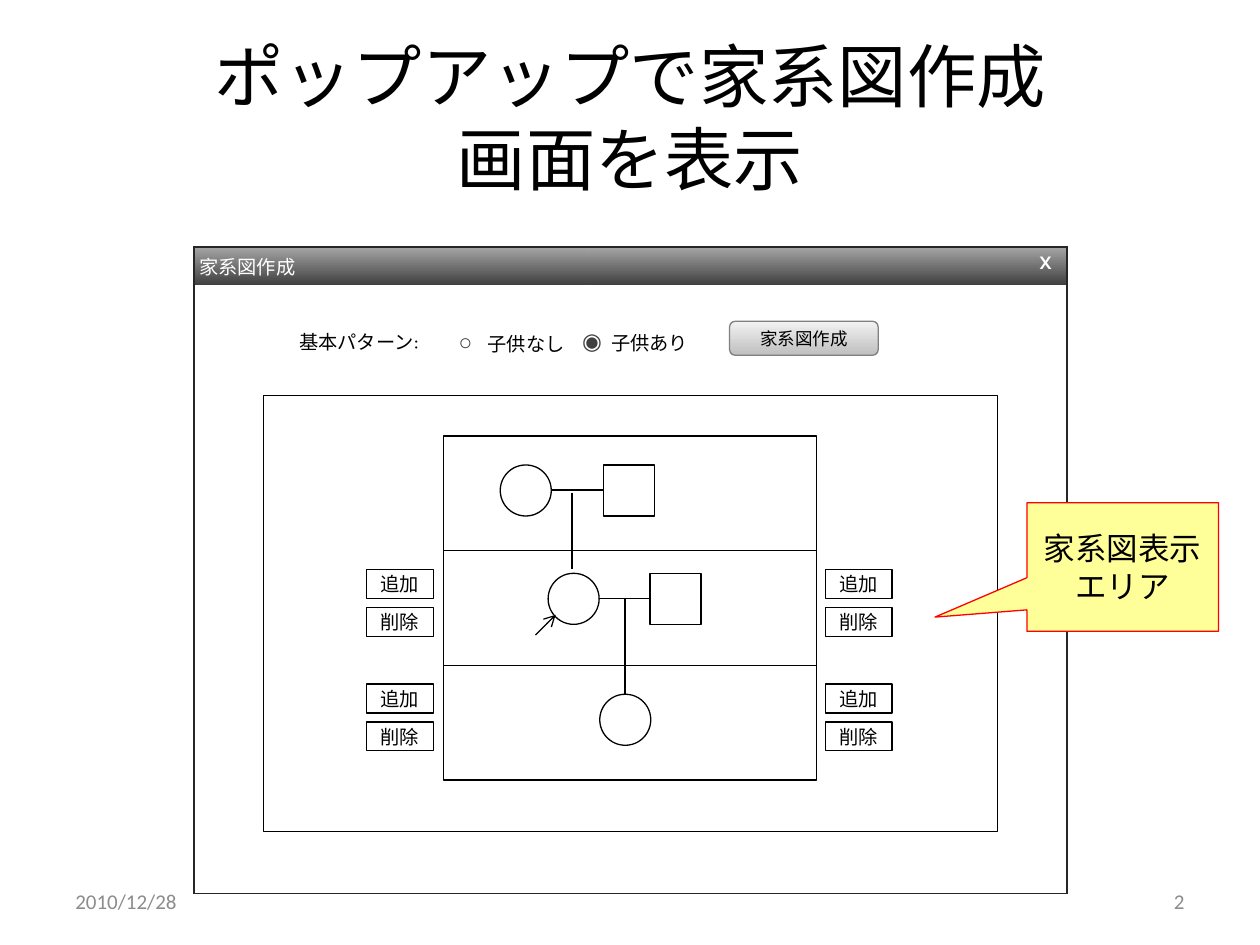
"""Build the slide that shows the pop-up window for drawing a family tree."""
from itertools import product

from lxml.etree import SubElement
from pptx import Presentation
from pptx.dml.color import RGBColor
from pptx.enum.shapes import MSO_CONNECTOR as LINK, MSO_SHAPE as SHAPE
from pptx.enum.text import MSO_ANCHOR as ANCHOR, PP_ALIGN as ALIGN
from pptx.oxml import parse_xml
from pptx.oxml.ns import nsdecls, qn
from pptx.util import Inches, Pt

COLORS = {
    "ink": "000000", "white": "FFFFFF", "frame": "262626", "radio": "404040",
    "bar_top": "A6A6A6", "bar_end": "404040", "key_top": "F2F2F2",
    "key_end": "BFBFBF", "key_line": "808080", "note": "FFFF99",
    "note_line": "FF0000", "footer": "8C8C8C",
}
PLAIN_TABLE = "{2D5ABB26-0587-4C30-8999-92F81FD0307C}"

prs = Presentation()
prs.slide_width, prs.slide_height = Inches(10), Inches(7.5)
COL, ROW = prs.slide_width // 100, prs.slide_height // 75
slide = prs.slides.add_slide(prs.slide_layouts[6])
shapes = slide.shapes


def write(frame, text, size=11, font="Calibri", color="ink", align=ALIGN.LEFT,
          anchor=ANCHOR.MIDDLE, bold=False):
    frame.word_wrap = True
    frame.vertical_anchor = anchor
    line = frame.paragraphs[0]
    line.text = text
    line.alignment = align
    for run in line.runs:
        run.font.size, run.font.name, run.font.bold = Pt(size), font, bold
        run.font.color.rgb = RGBColor.from_string(COLORS[color])


def draw(kind, left, top, width, height, line="ink", fill=()):
    shape = shapes.add_shape(kind, int(left * COL), int(top * ROW),
                             int(width * COL), int(height * ROW))
    shape.shadow.inherit = False
    shape.line.width = Pt(0.75)
    shape.line.color.rgb = RGBColor.from_string(COLORS[line])
    if len(fill) == 2:
        shape.fill.gradient()
        shape.fill.gradient_angle = 270
        for stop, name in zip(shape.fill.gradient_stops, fill):
            stop.color.rgb = RGBColor.from_string(COLORS[name])
    elif fill:
        shape.fill.solid()
        shape.fill.fore_color.rgb = RGBColor.from_string(COLORS[fill[0]])
    else:
        shape.fill.background()
    return shape


labels = [
    (5, 3, 90, 12.5, "ポップアップで家系図作成\n画面を表示", dict(size=39.6, align=ALIGN.CENTER)),
    (20.9, 26.3, 13.3, 1.7, "基本パターン:", dict(font="Karla", align=ALIGN.RIGHT)),
    (5, 69.5, 23.3, 4, "2010/12/28", dict(size=12, color="footer")),
    (71.7, 69.5, 23.3, 4, "2", dict(size=12, color="footer", align=ALIGN.RIGHT)),
]
for left, top, width, height, text, style in labels:
    box = shapes.add_textbox(int(left * COL), int(top * ROW),
                             int(width * COL), int(height * ROW))
    write(box.text_frame, text, **style)

tables = [
    (15.4, 19.6, (31.3, 38), (3, 48.3)),
    (36, 25.7, (2.3, 21.9), (2.6,)),
    (45.8, 25.6, (2.3, 21.9), (2.6,)),
]
grids = []
for left, top, widths, heights in tables:
    grid = shapes.add_table(len(heights), 2, int(left * COL), int(top * ROW),
                            int(sum(widths) * COL), int(sum(heights) * ROW)).table
    grid.first_row = grid.horz_banding = False
    grid._tbl.tblPr.find(qn("a:tableStyleId")).text = PLAIN_TABLE
    for column, width in zip(grid.columns, widths):
        column.width = int(width * COL)
    for row, height in zip(grid.rows, heights):
        row.height = int(height * ROW)
    for cell in grid.iter_cells():
        cell.fill.background()
        cell.margin_left = cell.margin_right = cell.margin_top = Inches(0.04)
        cell.margin_bottom = 0
    grids.append(grid)

window, *options = grids
window.cell(1, 0).merge(window.cell(1, 1))
for column, edges in enumerate(("LT", "RT")):
    bar = window.cell(0, column)
    bar.fill.gradient()
    bar.fill.gradient_angle = 270
    for stop, name in zip(bar.fill.gradient_stops, ("bar_top", "bar_end")):
        stop.color.rgb = RGBColor.from_string(COLORS[name])
window.cell(0, 1).margin_right = Inches(0.12)
for cell, text, style in (
        (window.cell(0, 0), "家系図作成", dict()),
        (window.cell(0, 1), "X", dict(align=ALIGN.RIGHT, bold=True))):
    write(cell.text_frame, text, font="Karla", color="white", **style)
    cell.vertical_anchor = ANCHOR.TOP
for cell, edges in zip(window.iter_cells(), ("LT", "RT", "LRB", "RB")):
    for place, edge in enumerate(edges):
        cell._tc.get_or_add_tcPr().insert(place, parse_xml(
            f'<a:ln{edge} {nsdecls("a")} w="12700"><a:solidFill>'
            f'<a:srgbClr val="{COLORS["frame"]}"/></a:solidFill></a:ln{edge}>'))

for grid, mark, text in zip(options, "○◉", ("子供なし", "子供あり")):
    write(grid.cell(0, 0).text_frame, mark, size=13, font="Arial", color="radio")
    write(grid.cell(0, 1).text_frame, text, font="Karla")
    for cell in grid.iter_cells():
        cell.vertical_anchor = ANCHOR.MIDDLE

create = draw(SHAPE.ROUNDED_RECTANGLE, 57.9, 25.5, 11.8, 2.7,
              line="key_line", fill=("key_top", "key_end"))
write(create.text_frame, "家系図作成", size=10, font="Karla", align=ALIGN.CENTER)

people = [
    (SHAPE.OVAL, 39.7, 36.9), (SHAPE.RECTANGLE, 47.9, 36.9),
    (SHAPE.OVAL, 43.5, 45.5), (SHAPE.RECTANGLE, 51.6, 45.5),
    (SHAPE.OVAL, 47.6, 55.1),
]
for kind, left, top in people:
    draw(kind, left, top, 4.05, 4.05)

ties = [
    (LINK.ELBOW, 43.8, 38.9, 47.9, 38.9), (LINK.ELBOW, 47.5, 47.5, 51.6, 47.5),
    (LINK.STRAIGHT, 45.4, 39.1, 45.4, 45.2), (LINK.STRAIGHT, 49.6, 47.5, 49.6, 55.1),
    (LINK.STRAIGHT, 42.5, 50.4, 44.1, 48.8),
]
for kind, x1, y1, x2, y2 in ties:
    tie = shapes.add_connector(kind, int(x1 * COL), int(y1 * ROW),
                               int(x2 * COL), int(y2 * ROW))
    tie.line.width = Pt(0.75)
    tie.line.color.rgb = RGBColor.from_string(COLORS["ink"])
    SubElement(tie._element.spPr, qn("a:effectLst"))
pointer = tie
SubElement(pointer.line._get_or_add_ln(), qn("a:tailEnd"), type="arrow")

for left, top, (step, text) in product(
        (65.5, 29.1), (45.2, 54.3), enumerate(("追加", "削除"))):
    key = draw(SHAPE.RECTANGLE, left, top + 3 * step, 5.3, 2.3)
    key.text_frame.margin_top = key.text_frame.margin_bottom = 0
    write(key.text_frame, text, align=ALIGN.CENTER)

for generation in range(3):
    draw(SHAPE.RECTANGLE, 35.2, 34.6 + 9.1 * generation, 29.6, 9.1)
draw(SHAPE.RECTANGLE, 20.9, 31.4, 58.3, 34.6)

note = draw(SHAPE.RECTANGULAR_CALLOUT, 81.5, 39.9, 15.2, 10.2,
            line="note_line", fill=("note",))
note.adjustments[0], note.adjustments[1] = -0.98, 0.39
write(note.text_frame, "家系図表示エリア", size=18, align=ALIGN.CENTER)

prs.save("out.pptx")
